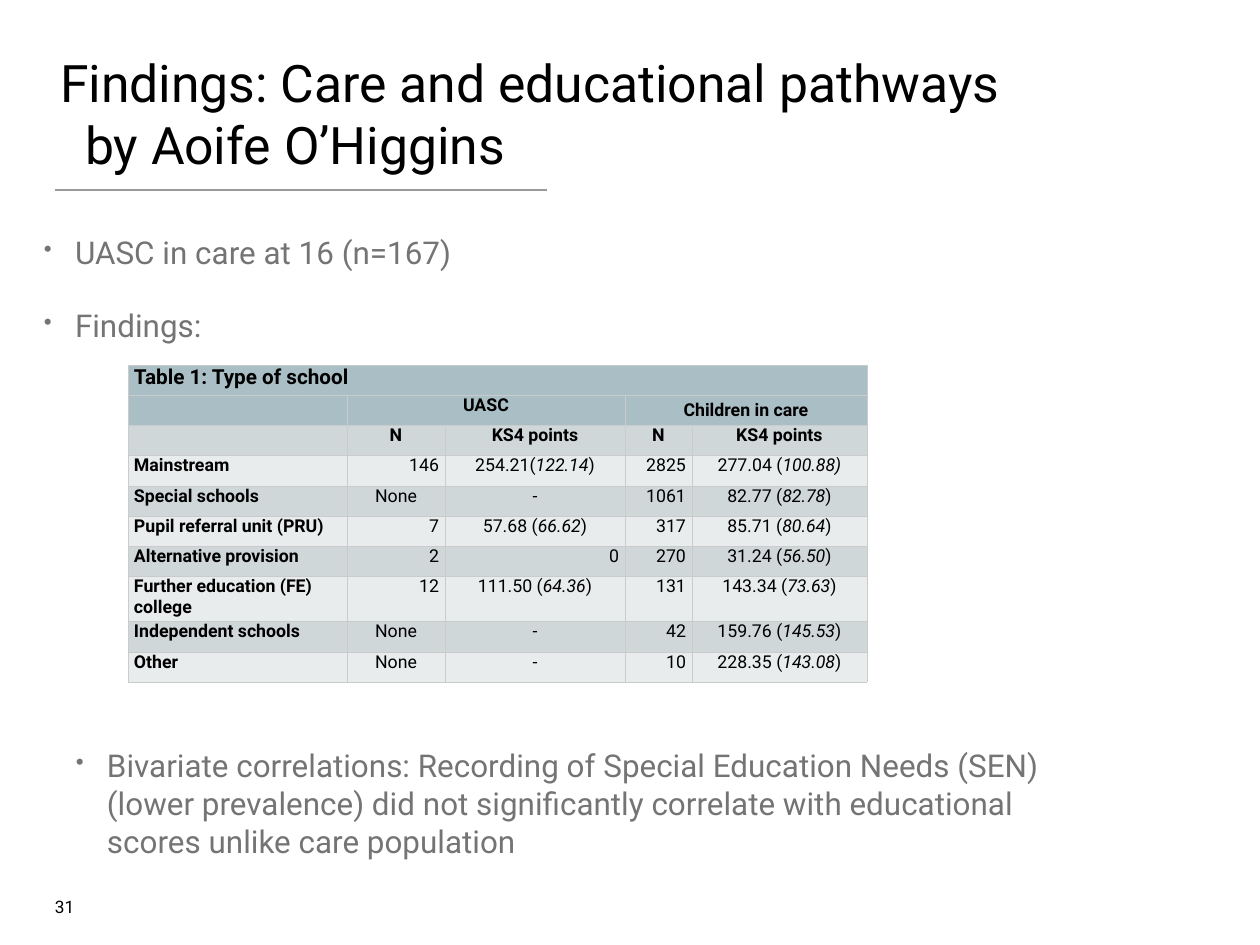
from lxml import etree
from pptx import Presentation
from pptx import util as u
from pptx.dml.color import RGBColor
from pptx.enum import shapes, text
from pptx.oxml import parse_xml
from pptx.oxml.ns import nsdecls, qn

PX = 10320
LEFT, CENTER, RIGHT = text.PP_ALIGN.LEFT, text.PP_ALIGN.CENTER, text.PP_ALIGN.RIGHT


def px(count):
    return u.Emu(count * PX)


def color(value):
    return RGBColor.from_string(value)


class SlideBuilder:
    font = "Roboto"
    black = "000000"
    gray = "747474"
    rule = "9A9A9A"
    border = "CBCBCB"
    header = "AABEC5"
    bands = ("D0D7D9", "E9ECED")
    inset = 5
    cell_inset = 6

    def __init__(self, deck):
        self.page = deck.slides.add_slide(deck.slide_layouts[6])

    def style(self, span, size, shade, bold=False, italic=False):
        span.font.name = self.font
        span.font.size = u.Pt(size)
        span.font.color.rgb = color(shade)
        span.font.bold = bold
        span.font.italic = italic

    def text_box(self, left, top, width, height, lines, size, shade,
                 anchor=text.MSO_ANCHOR.TOP):
        box = self.page.shapes.add_textbox(px(left), px(top), px(width), px(height))
        frame = box.text_frame
        frame.word_wrap = True
        frame.vertical_anchor = anchor
        frame.margin_left = frame.margin_right = px(self.inset)
        frame.margin_top = frame.margin_bottom = px(self.inset)
        frame.text = "\n".join(lines)
        for para in frame.paragraphs:
            for span in para.runs:
                self.style(span, size, shade)
        return frame.paragraphs

    def indent(self, para, left, first=0):
        properties = para._p.get_or_add_pPr()
        properties.set("marL", str(px(left)))
        properties.set("indent", str(px(first)))
        return properties

    def bullet(self, para, left, space_before):
        para.space_before = u.Pt(space_before)
        properties = self.indent(para, left, -31)
        etree.SubElement(properties, qn("a:buSzPct")).set("val", "75000")
        etree.SubElement(properties, qn("a:buChar")).set("char", "•")

    def line(self, left, top, right, bottom):
        connector = self.page.shapes.add_connector(
            shapes.MSO_CONNECTOR.STRAIGHT, px(left), px(top), px(right), px(bottom))
        connector.line.color.rgb = color(self.rule)
        connector.line.width = u.Pt(1)
        etree.SubElement(connector._element.spPr, qn("a:effectLst"))

    def table(self, left, top, widths, heights):
        frame = self.page.shapes.add_table(
            len(heights), len(widths), px(left), px(top),
            px(sum(widths)), px(sum(heights)))
        grid = frame.table
        grid.first_row = grid.horz_banding = False
        for column, width in zip(grid.columns, widths):
            column.width = px(width)
        for row, height in zip(grid.rows, heights):
            row.height = px(height)
        return grid

    def cell(self, cell, content, fill, size=14.4, bold=False, align=CENTER):
        cell.margin_left = cell.margin_right = px(self.cell_inset)
        cell.margin_top = cell.margin_bottom = 0
        properties = cell._tc.get_or_add_tcPr()
        for side in ("lnL", "lnR", "lnT", "lnB"):
            properties.append(parse_xml(
                f'<a:{side} {nsdecls("a")} w="6350"><a:solidFill>'
                f'<a:srgbClr val="{self.border}"/></a:solidFill></a:{side}>'))
        cell.fill.solid()
        cell.fill.fore_color.rgb = color(fill)
        para = cell.text_frame.paragraphs[0]
        para.alignment = align
        para.font.size = u.Pt(size)
        for index, part in enumerate(content.split("_")):
            if part:
                span = para.add_run()
                span.text = part
                self.style(span, size, self.black, bold, index % 2 == 1)


SCHOOL_ROWS = [
    ["Table 1: Type of school", "", "", "", ""],
    ["", "UASC", "", "Children in care", ""],
    ["", "N", "KS4 points", "N", "KS4 points"],
    ["Mainstream", "146", "254.21(_122.14_)", "2825", "277.04 (_100.88)"],
    ["Special schools", "None", "-", "1061", "82.77 (_82.78_)"],
    ["Pupil referral unit (PRU)", "7", "57.68 (_66.62_)", "317", "85.71 (_80.64_)"],
    ["Alternative provision", "2", "0", "270", "31.24 (_56.50_)"],
    ["Further education (FE) college", "12", "111.50 (_64.36_)", "131", "143.34 (_73.63_)"],
    ["Independent schools", "None", "-", "42", "159.76 (_145.53_)"],
    ["Other", "None", "-", "10", "228.35 (_143.08_)"],
]


def add_school_table(slide):
    widths = [219, 98, 180, 67, 175]
    heights = [30, 30, 30, 31, 30, 30, 30, 45, 31, 30]
    grid = slide.table(128, 365, widths, heights)
    for row, values in enumerate(SCHOOL_ROWS):
        fill = slide.header if row < 2 else slide.bands[row % 2]
        for column, value in enumerate(values):
            align = LEFT if column == 0 else RIGHT if value.isdigit() else CENTER
            slide.cell(grid.cell(row, column), value, fill,
                       size=16.8 if row == 0 else 14.4,
                       bold=row < 3 or column == 0, align=align)
    for row, first, last in ((0, 0, 4), (1, 1, 2), (1, 3, 4)):
        grid.cell(row, first).merge(grid.cell(row, last))
    grid.cell(1, 3).vertical_anchor = text.MSO_ANCHOR.MIDDLE


def main():
    deck = Presentation()
    deck.slide_width, deck.slide_height = px(1260), px(945)
    slide = SlideBuilder(deck)

    slide.line(55, 190, 547, 190)
    title = slide.text_box(
        55, 33, 1136, 147,
        ["Findings: Care and educational pathways", "by Aoife O’Higgins"],
        42, slide.black, anchor=text.MSO_ANCHOR.BOTTOM)
    slide.indent(title[1], 25)

    findings = slide.text_box(
        39, 228, 1021, 646,
        ["UASC in care at 16 (n=167)", "Findings:",
         "Bivariate correlations: Recording of Special Education Needs (SEN) "
         "(lower prevalence) did not significantly correlate with educational "
         "scores unlike care population"],
        25.5, slide.gray)
    for para, left, space in zip(findings, (31, 31, 63), (29, 29, 327)):
        slide.bullet(para, left, space)

    add_school_table(slide)
    slide.text_box(50, 891, 40, 29, ["31"], 14, slide.black)
    deck.save("out.pptx")


if __name__ == "__main__":
    main()
